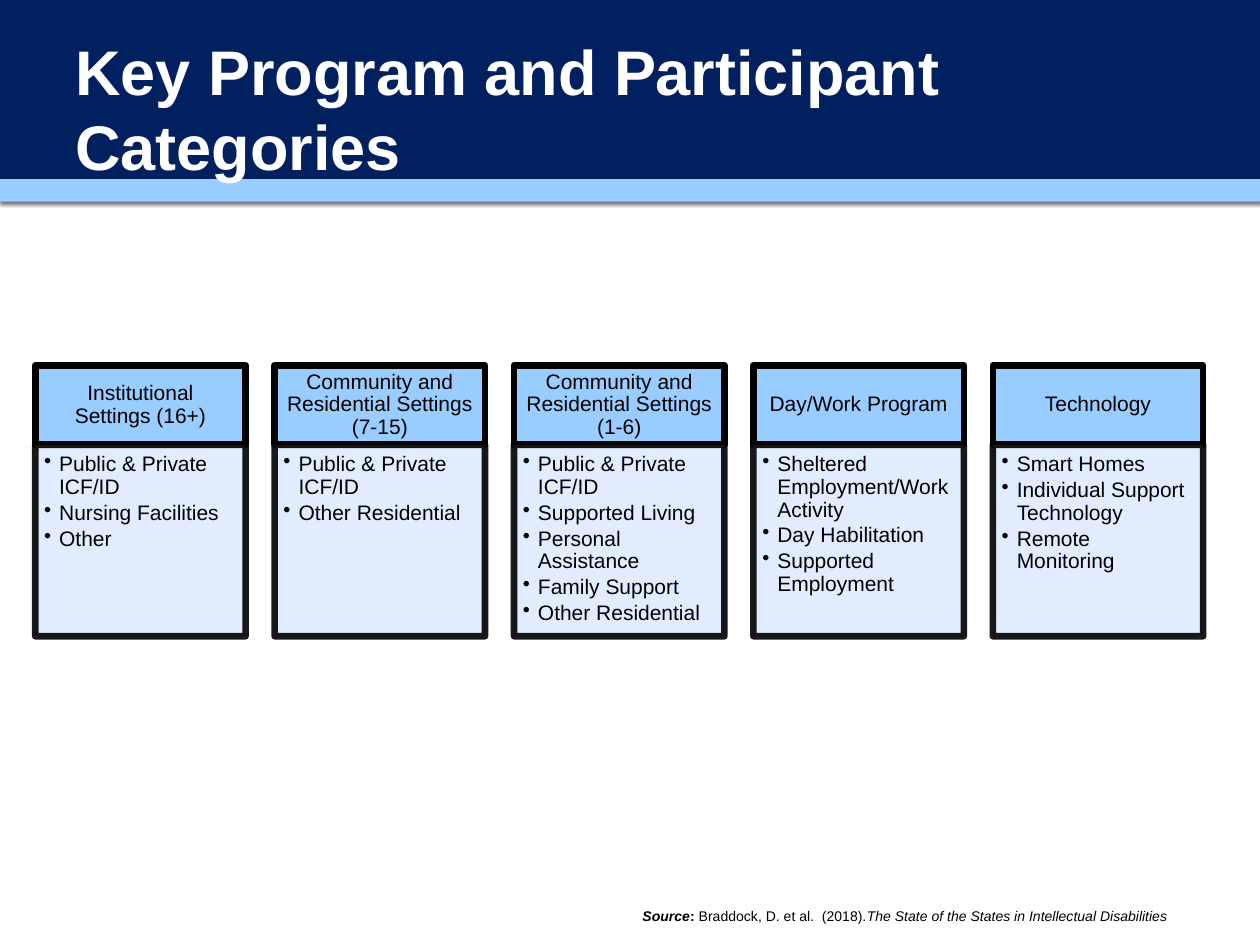
from lxml import etree
from pptx import Presentation
from pptx.dml.color import RGBColor
from pptx.enum.shapes import MSO_SHAPE
from pptx.enum.text import MSO_ANCHOR, PP_ALIGN
from pptx.oxml.ns import qn
from pptx.util import Inches, Pt

RECT = MSO_SHAPE.RECTANGLE
TOP, MIDDLE = MSO_ANCHOR.TOP, MSO_ANCHOR.MIDDLE
LEFT, CENTER = PP_ALIGN.LEFT, PP_ALIGN.CENTER

FONT = "Arial"
COLORS = {
    "navy": "002060",
    "sky": "99CCFF",
    "pale": "DEECFF",
    "black": "000000",
    "white": "FFFFFF",
}

CARD_LEFT, CARD_TOP, CARD_STEP = 0.28, 2.9, 1.9
CARD_W, HEAD_H, BODY_H = 1.67, 0.63, 1.52

CATEGORIES = [
    ("Institutional Settings (16+)",
     ["Public & Private ICF/ID", "Nursing Facilities", "Other"]),
    ("Community and Residential Settings (7-15)",
     ["Public & Private ICF/ID", "Other Residential"]),
    ("Community and Residential Settings (1-6)",
     ["Public & Private ICF/ID", "Supported Living", "Personal Assistance",
      "Family Support", "Other Residential"]),
    ("Day/Work Program",
     ["Sheltered Employment/Work Activity", "Day Habilitation",
      "Supported Employment"]),
    ("Technology",
     ["Smart Homes", "Individual Support Technology", "Remote Monitoring"]),
]

SOURCE_RUNS = [
    ("Source", True, True),
    (": ", True, False),
    ("Braddock, D. et al.  (2018).", False, False),
    ("The State of the States in Intellectual Disabilities", False, True),
]


def rgb(name):
    return RGBColor.from_string(COLORS[name])


def set_font(p, size, color, bold=False):
    p.font.name = FONT
    p.font.size = Pt(size)
    p.font.bold = bold
    p.font.color.rgb = rgb(color)


def set_frame(tf, insets, anchor=TOP, wrap=True):
    tf.margin_left, tf.margin_top, tf.margin_right, tf.margin_bottom = map(Inches, insets)
    tf.vertical_anchor = anchor
    tf.word_wrap = wrap


def set_alpha(fill_parent, percent):
    color = fill_parent.find(qn("a:solidFill"))[0]
    etree.SubElement(color, qn("a:alpha"), val=str(percent * 1000))


def add_rect(s, x, y, w, h, fill, line=None):
    sp = s.shapes.add_shape(RECT, Inches(x), Inches(y), Inches(w), Inches(h))
    sp.shadow.inherit = False
    sp.fill.solid()
    sp.fill.fore_color.rgb = rgb(fill)
    if line:
        sp.line.color.rgb = rgb(line)
        sp.line.width = Pt(3.78)
    else:
        sp.line.fill.background()
    return sp


def add_text_box(s, x, y, w, h):
    return s.shapes.add_textbox(Inches(x), Inches(y), Inches(w), Inches(h)).text_frame


def add_drop_shadow(sp):
    effects = sp._element.spPr.find(qn("a:effectLst"))
    shadow = etree.SubElement(
        effects, qn("a:outerShdw"), blurRad=str(Pt(2.5)), dist=str(Pt(0.8)),
        dir="5400000", algn="ctr", rotWithShape="0")
    color = etree.SubElement(shadow, qn("a:srgbClr"), val=COLORS["black"])
    etree.SubElement(color, qn("a:alpha"), val="60000")


def add_bullet(p):
    pPr = p._p.get_or_add_pPr()
    pPr.set("marL", str(Inches(0.12)))
    pPr.set("indent", str(Inches(-0.12)))
    bullet = etree.Element(qn("a:buChar"), char="•")
    pPr.find(qn("a:defRPr")).addprevious(bullet)


def add_card_paragraph(p, text, align, space_after):
    p.text = text
    p.alignment = align
    p.line_spacing = 0.9
    p.space_after = Pt(space_after)
    set_font(p, 12, "black")


def add_card(s, x, heading, items):
    head = add_rect(s, x, CARD_TOP, CARD_W, HEAD_H, "sky", "black")
    set_frame(head.text_frame, (0.09, 0.05, 0.09, 0.05), MIDDLE)
    add_card_paragraph(head.text_frame.paragraphs[0], heading, CENTER, 4.2)

    body = add_rect(s, x, CARD_TOP + HEAD_H, CARD_W, BODY_H, "pale", "black")
    spPr = body._element.spPr
    set_alpha(spPr, 90)
    set_alpha(spPr.find(qn("a:ln")), 90)
    tf = body.text_frame
    set_frame(tf, (0.07, 0.07, 0.09, 0.1))
    for i, item in enumerate(items):
        p = tf.add_paragraph() if i else tf.paragraphs[0]
        add_card_paragraph(p, item, LEFT, 1.8)
        add_bullet(p)


def add_header(s, title):
    band = add_rect(s, 0, 1.42, 10, 0.18, "sky")
    add_drop_shadow(band)
    add_rect(s, 0, 0, 10, 1.42, "navy")
    tf = add_text_box(s, 0.5, 0.17, 9, 1.37)
    set_frame(tf, (0.1, 0.05, 0.05, 0.05), MIDDLE)
    p = tf.paragraphs[0]
    p.text = title
    set_font(p, 36, "white", bold=True)


def add_source(s):
    tf = add_text_box(s, 5, 7.15, 4.51, 0.24)
    set_frame(tf, (0.1, 0.05, 0.1, 0.05), wrap=False)
    p = tf.paragraphs[0]
    set_font(p, 8, "black")
    for text, bold, italic in SOURCE_RUNS:
        r = p.add_run()
        r.text = text
        r.font.bold = bold
        r.font.italic = italic


def main():
    prs = Presentation()
    prs.slide_width, prs.slide_height = Inches(10), Inches(7.5)
    s = prs.slides.add_slide(prs.slide_layouts[6])
    add_header(s, "Key Program and Participant Categories")
    add_source(s)
    for i, (heading, items) in enumerate(CATEGORIES):
        add_card(s, CARD_LEFT + i * CARD_STEP, heading, items)
    prs.save("out.pptx")


if __name__ == "__main__":
    main()
